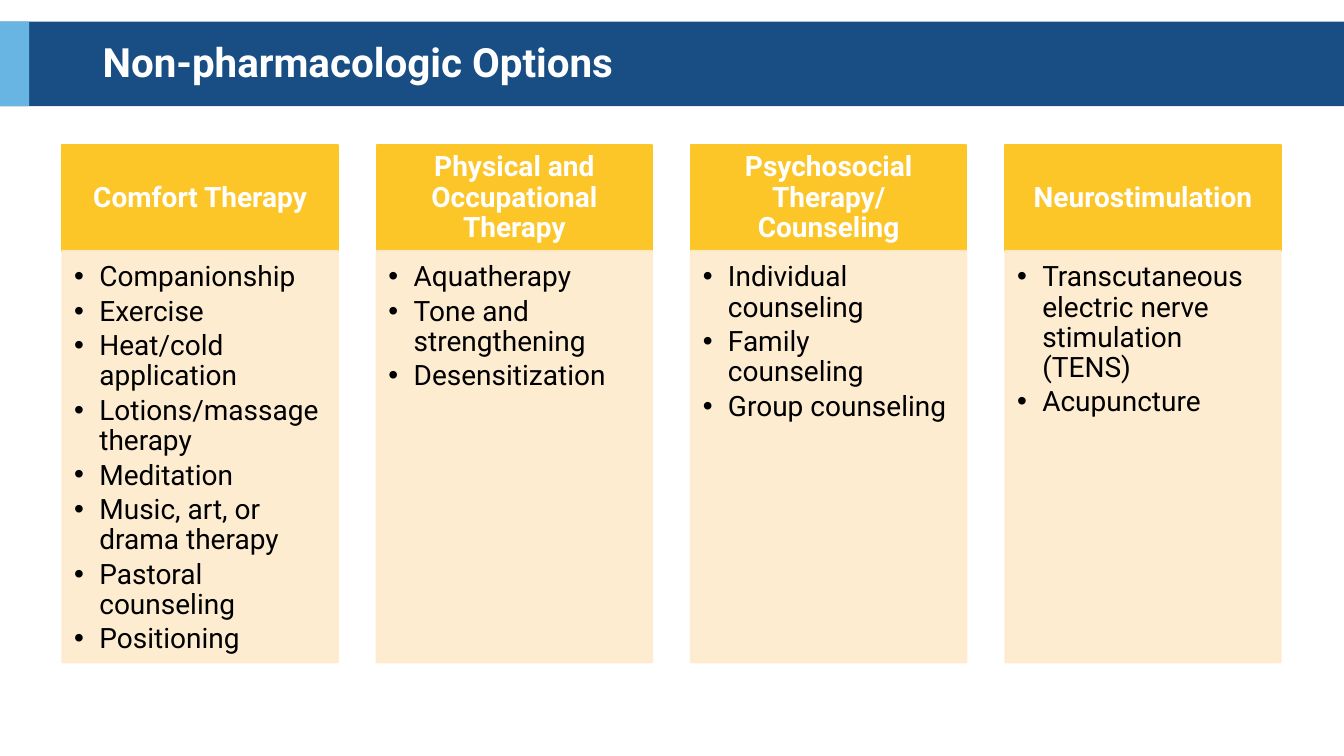
"""Build the Non-pharmacologic Options slide with four therapy columns."""
from dataclasses import dataclass

import pptx
import pptx.dml.color
import pptx.enum.shapes
import pptx.enum.text
import pptx.oxml
import pptx.oxml.ns
import pptx.shapes.autoshape
import pptx.slide
import pptx.text.text
import pptx.util

Pt = pptx.util.Pt
ALIGN = pptx.enum.text.PP_ALIGN
ANCHOR = pptx.enum.text.MSO_ANCHOR


@dataclass(frozen=True)
class Theme:
    """Colours, font and type sizes of the slide."""
    font: str = "Roboto"
    navy: str = "194E84"
    sky: str = "68B5E4"
    gold: str = "FCC528"
    cream: str = "FEEACD"
    white: str = "FFFFFF"
    black: str = "000000"
    title_size: float = 28.8
    text_size: float = 20


@dataclass(frozen=True)
class Box:
    """A rectangle in points."""
    left: float
    top: float
    width: float
    height: float


@dataclass(frozen=True)
class Column:
    """A heading and its bulleted options."""
    heading: str
    options: tuple[str, ...]


THEME = Theme()
SLIDE_W, SLIDE_H = 960, 540
COL_LEFT, COL_PITCH, COL_W = 44.6, 224.5, 196.7
HEAD_TOP, HEAD_H, BODY_H = 103.7, 75.5, 293.9
INDENT = 18

COLUMNS = (
    Column("Comfort Therapy", (
        "Companionship", "Exercise", "Heat/cold application",
        "Lotions/massage therapy", "Meditation",
        "Music, art, or drama therapy", "Pastoral counseling", "Positioning")),
    Column("Physical and Occupational Therapy", (
        "Aquatherapy", "Tone and strengthening", "Desensitization")),
    Column("Psychosocial Therapy/ Counseling", (
        "Individual counseling", "Family counseling", "Group counseling")),
    Column("Neurostimulation", (
        "Transcutaneous electric nerve stimulation (TENS)", "Acupuncture")),
)


def rgb(color: str) -> pptx.dml.color.RGBColor:
    """Return a colour object for a hex string."""
    return pptx.dml.color.RGBColor.from_string(color)


def add_rect(s: pptx.slide.Slide, box: Box, color: str,
             outlined: bool = False) -> pptx.shapes.autoshape.Shape:
    """Add a filled rectangle, with an outline of the same colour if asked."""
    sp = s.shapes.add_shape(pptx.enum.shapes.MSO_SHAPE.RECTANGLE, Pt(box.left),
                            Pt(box.top), Pt(box.width), Pt(box.height))
    sp.shadow.inherit = False
    sp.fill.solid()
    sp.fill.fore_color.rgb = rgb(color)
    if outlined:
        sp.line.color.rgb = rgb(color)
        sp.line.width = Pt(1.5)
    else:
        sp.line.fill.background()
    return sp


def set_alpha(sp: pptx.shapes.autoshape.Shape, percent: int) -> None:
    """Make the fill and outline of a shape partly transparent."""
    for clr in sp.fill._xPr.iter(pptx.oxml.ns.qn("a:srgbClr")):
        alpha = pptx.oxml.parse_xml(
            f'<a:alpha {pptx.oxml.ns.nsdecls("a")} val="{percent * 1000}"/>')
        clr.append(alpha)


def set_frame(tf: pptx.text.text.TextFrame, anchor: ANCHOR,
              insets: tuple[float, float, float, float]) -> None:
    """Set wrapping, anchor and insets (left, top, right, bottom)."""
    tf.word_wrap = True
    tf.vertical_anchor = anchor
    tf.margin_left, tf.margin_top, tf.margin_right, tf.margin_bottom = map(Pt, insets)


def set_bullet(p: pptx.text.text._Paragraph) -> None:
    """Give a paragraph a hanging bullet."""
    pPr = p._p.get_or_add_pPr()
    pPr.set("marL", str(Pt(INDENT)))
    pPr.set("indent", str(-Pt(INDENT)))
    pPr.append(pptx.oxml.parse_xml(
        f'<a:buFont {pptx.oxml.ns.nsdecls("a")} typeface="Arial"/>'))
    pPr.append(pptx.oxml.parse_xml(
        f'<a:buChar {pptx.oxml.ns.nsdecls("a")} char="•"/>'))


def add_text(p: pptx.text.text._Paragraph, text: str, size: float, color: str,
             bold: bool, align: ALIGN) -> None:
    """Write one run into a paragraph."""
    p.alignment = align
    p.line_spacing = 0.9
    r = p.add_run()
    r.text = text
    r.font.name = THEME.font
    r.font.size = Pt(size)
    r.font.bold = bold
    r.font.color.rgb = rgb(color)


def add_banner(s: pptx.slide.Slide, title: str) -> None:
    """Draw the title band, its accent and the title."""
    add_rect(s, Box(0, 15.4, SLIDE_W, 60.5), THEME.navy)
    add_rect(s, Box(0, 15.4, 20.8, 60.5), THEME.sky)
    tb = s.shapes.add_textbox(Pt(66.2), Pt(28.8), Pt(805.7), Pt(34.6))
    set_frame(tb.text_frame, ANCHOR.MIDDLE, (7.2, 3.6, 7.2, 3.6))
    add_text(tb.text_frame.paragraphs[0], title, THEME.title_size, THEME.white,
             True, ALIGN.LEFT)


def add_column(s: pptx.slide.Slide, left: float, column: Column) -> None:
    """Draw one heading box with its list below."""
    head = add_rect(s, Box(left, HEAD_TOP, COL_W, HEAD_H), THEME.gold, True)
    set_frame(head.text_frame, ANCHOR.MIDDLE, (11.2, 6.4, 11.2, 6.4))
    add_text(head.text_frame.paragraphs[0], column.heading, THEME.text_size,
             THEME.white, True, ALIGN.CENTER)

    body = add_rect(s, Box(left, HEAD_TOP + HEAD_H, COL_W, BODY_H), THEME.cream, True)
    set_alpha(body, 90)
    tf = body.text_frame
    set_frame(tf, ANCHOR.TOP, (8.4, 8.4, 11.2, 12.6))
    for i, option in enumerate(column.options):
        p = tf.add_paragraph() if i else tf.paragraphs[0]
        set_bullet(p)
        p.space_after = Pt(3)
        add_text(p, option, THEME.text_size, THEME.black, False, ALIGN.LEFT)


def main() -> None:
    """Build and save the slide."""
    prs = pptx.Presentation()
    prs.slide_width, prs.slide_height = Pt(SLIDE_W), Pt(SLIDE_H)
    s = prs.slides.add_slide(prs.slide_layouts[6])
    add_banner(s, "Non-pharmacologic Options")
    for i, column in enumerate(COLUMNS):
        add_column(s, COL_LEFT + i * COL_PITCH, column)
    prs.save("out.pptx")


if __name__ == "__main__":
    main()
